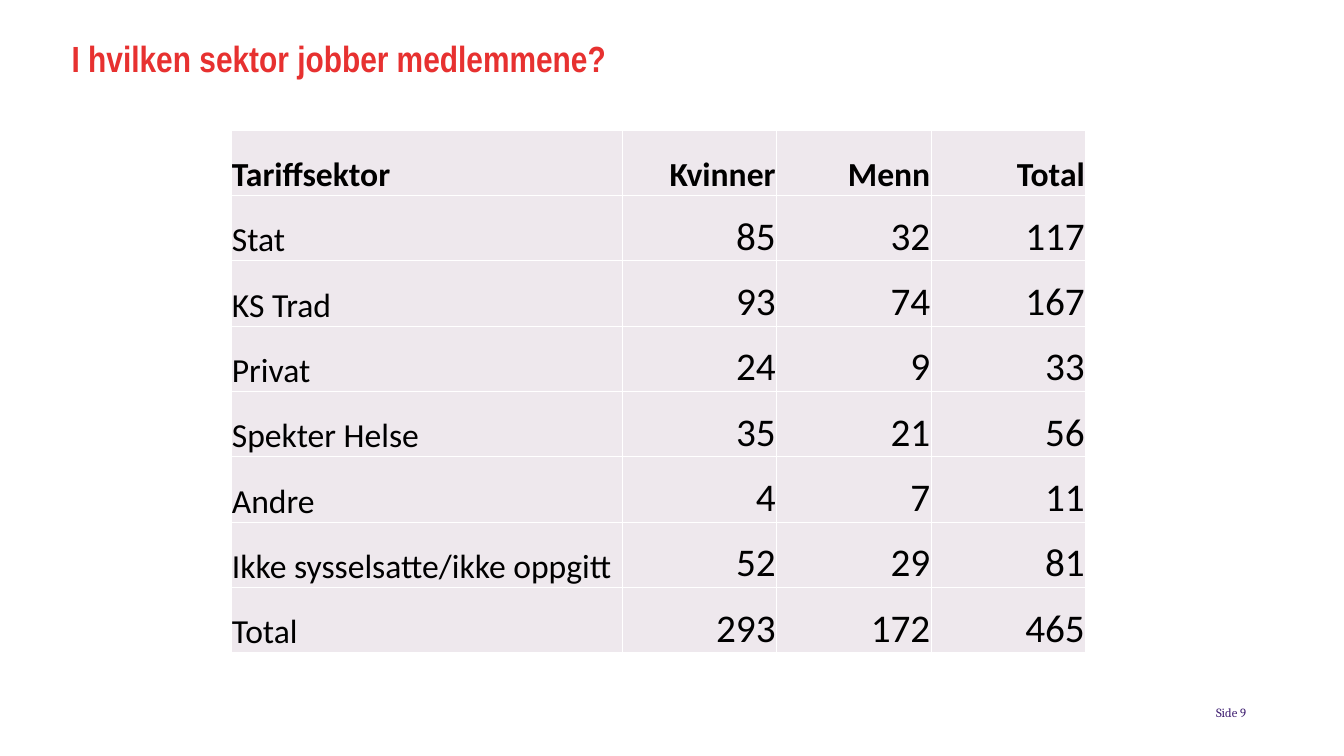
from lxml import etree
from pptx import Presentation
from pptx.dml.color import RGBColor
from pptx.enum import text as t
from pptx.oxml import ns
from pptx.util import Inches, Pt

HUES = {"title": "E73130", "page": "3F1F71", "ink": "000000",
        "cell": "EEE8ED", "rule": "FFFFFF"}
HEAD = ["Tariffsektor", "Kvinner", "Menn", "Total"]
ROWS = [
    ["Stat", 85, 32, 117],
    ["KS Trad", 93, 74, 167],
    ["Privat", 24, 9, 33],
    ["Spekter Helse", 35, 21, 56],
    ["Andre", 4, 7, 11],
    ["Ikke sysselsatte/ikke oppgitt", 52, 29, 81],
    ["Total", 293, 172, 465],
]


def hue(name):
    """Return the named colour."""
    return RGBColor.from_string(HUES[name])


def write(frame, words, face, size, tint, bold=False, align=t.PP_ALIGN.LEFT):
    """Put one styled paragraph in a frame."""
    frame.text = words
    para = frame.paragraphs[0]
    para.alignment = align
    font = para.runs[0].font
    font.name, font.size, font.bold = face, Pt(size), bold
    font.color.rgb = hue(tint)
    return para


def place(shape, box):
    """Fit a text shape to a box without insets."""
    shape.left, shape.top, shape.width, shape.height = map(Inches, box)
    frame = shape.text_frame
    frame.word_wrap = True
    frame.auto_size = t.MSO_AUTO_SIZE.NONE
    frame.margin_left = frame.margin_right = 0
    frame.margin_top = frame.margin_bottom = 0
    return frame


def title(slide, box):
    """Format the title placeholder."""
    frame = place(slide.shapes.title, box)
    frame.vertical_anchor = t.MSO_ANCHOR.TOP
    para = write(frame, "I hvilken sektor jobber medlemmene?",
                 "Arial Narrow", 26, "title", True)
    para.line_spacing = Pt(29)


def footer(slide, box):
    """Add the page number."""
    frame = place(slide.shapes.add_textbox(0, 0, 0, 0), box)
    frame.vertical_anchor = t.MSO_ANCHOR.MIDDLE
    write(frame, "Side 9", "Cambria", 9, "page", align=t.PP_ALIGN.RIGHT)


def edge(cell):
    """Draw a thin rule on each side of a cell."""
    props = cell._tc.get_or_add_tcPr()
    for i, side in enumerate("LRTB"):
        line = etree.Element(ns.qn("a:ln" + side), w=str(Pt(1)))
        fill = etree.SubElement(line, ns.qn("a:solidFill"))
        etree.SubElement(fill, ns.qn("a:srgbClr"), val=HUES["rule"])
        props.insert(i, line)


def grid(slide, box):
    """Add the table of members by sector."""
    x, y, wide, high = box
    data = [HEAD] + ROWS
    table = slide.shapes.add_table(len(data), len(HEAD), *map(Inches, box)).table
    first = 3.88
    for c, col in enumerate(table.columns):
        col.width = Inches((wide - first) / (len(HEAD) - 1) if c else first)
    for r, row in enumerate(data):
        table.rows[r].height = Inches(high / len(data))
        for c, value in enumerate(row):
            cell = table.cell(r, c)
            cell.margin_left = cell.margin_right = cell.margin_top = Inches(0.01)
            cell.margin_bottom = 0
            cell.vertical_anchor = t.MSO_ANCHOR.BOTTOM
            cell.fill.solid()
            cell.fill.fore_color.rgb = hue("cell")
            edge(cell)
            write(cell.text_frame, str(value), "Calibri", 28 if r and c else 24,
                  "ink", r == 0, t.PP_ALIGN.RIGHT if c else t.PP_ALIGN.LEFT)


def main():
    """Build and save the slide."""
    deck = Presentation()
    deck.slide_width, deck.slide_height = Inches(13.33), Inches(7.5)
    slide = deck.slides.add_slide(deck.slide_layouts[5])
    title(slide, (0.71, 0.39, 8.63, 0.81))
    footer(slide, (9.36, 6.99, 3, 0.15))
    grid(slide, (2.29, 1.29, 8.48, 5.19))
    deck.save("out.pptx")


if __name__ == "__main__":
    main()
